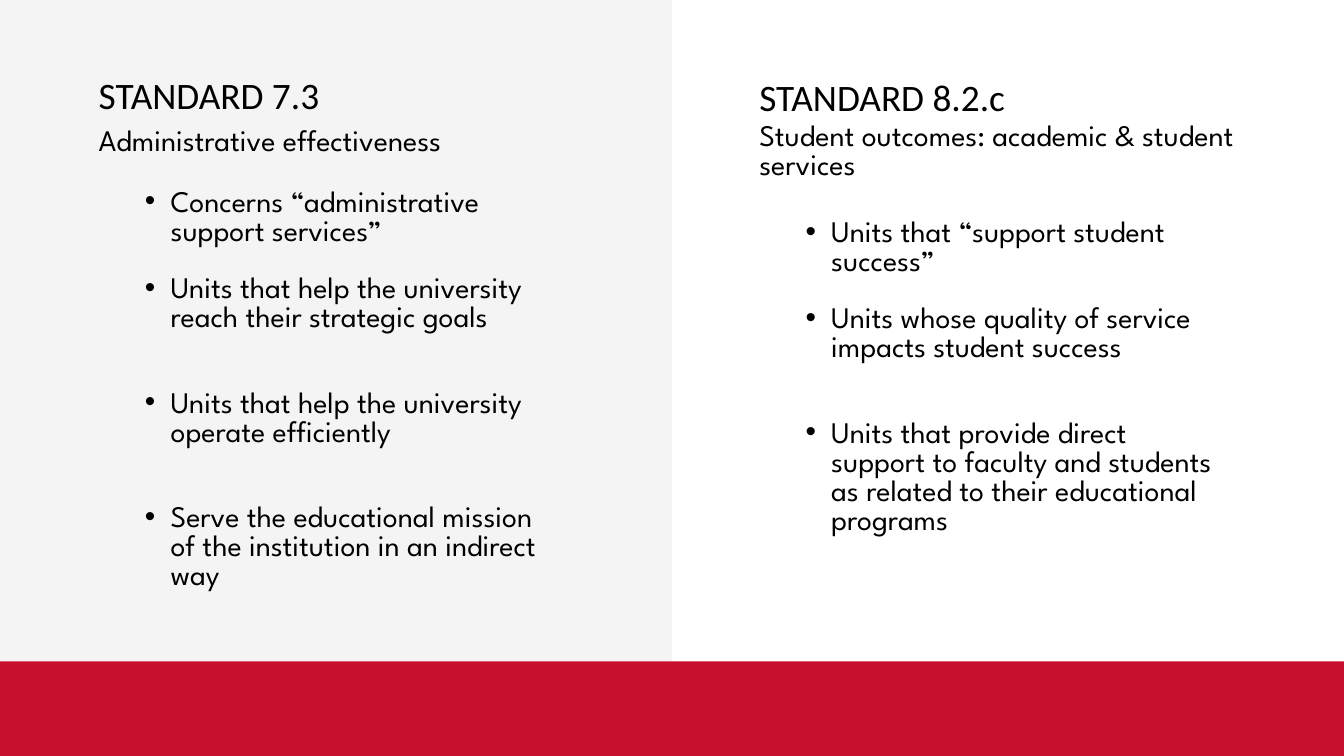
from lxml.etree import SubElement
from pptx import Presentation
from pptx.dml.color import RGBColor
from pptx.enum.shapes import MSO_SHAPE
from pptx.enum.text import MSO_AUTO_SIZE
from pptx.oxml.ns import qn
from pptx.util import Cm, Pt

BLACK = RGBColor(0x00, 0x00, 0x00)
PALE_GREY = RGBColor(0xF4, 0xF4, 0xF4)
RED = RGBColor(0xC8, 0x10, 0x2E)
HEADING_FONT, BODY_FONT = "Calibri", "League Spartan"

# All lengths are in cm. Headings and subtitles: text, top, width, height, line spacing in pt.
# Points: text, height.
STANDARDS = [
    {
        "left": 3.73,
        "heading": ("STANDARD 7.3", 3.02, 16.38, 1.52, 40),
        "subtitle": ("Administrative effectiveness", 4.39, 16.38, 1.5, 44.8),
        "points_top": 7.16,
        "points": [
            ("Concerns “administrative support services”", 2.34),
            ("Units that help the university reach their strategic goals", 3.41),
            ("Units that help the university operate efficiently", 3.41),
            ("Serve the educational mission of the institution in an indirect way", 3.41),
        ],
    },
    {
        "left": 28.7,
        "heading": ("STANDARD 8.2.c", 3.07, 16.38, 1.47, 40),
        "subtitle": ("Student outcomes: academic & student services", 4.67, 19.23, 2.29, 31),
        "points_top": 8.31,
        "points": [
            ("Units that “support student success”", 2.34),
            ("Units whose quality of service impacts student success", 3.41),
            ("Units that provide direct support to faculty and students "
             "as related to their educational programs", 4.5),
        ],
    },
]

SLIDE_WIDTH, SLIDE_HEIGHT = 50.8, 28.58
PANEL_HEIGHT, BAND_HEIGHT = 25, 3.81
POINT_SHIFT, POINT_WIDTH, POINT_GAP, POINT_SPACING = 0.79, 16.38, 0.92, 31
BULLET_MARGIN, BULLET_INDENT = 1.93, -0.97


def add_block(slide, left, top, width, height, color):
    block = slide.shapes.add_shape(
        MSO_SHAPE.RECTANGLE, Cm(left), Cm(top), Cm(width), Cm(height))
    block.shadow.inherit = False
    block.fill.solid()
    block.fill.fore_color.rgb = color
    block.line.fill.background()


def add_text(slide, text, left, top, width, height, spacing, font=BODY_FONT, size=32):
    """Add a one-paragraph box without insets and return its paragraph."""
    box = slide.shapes.add_textbox(Cm(left), Cm(top), Cm(width), Cm(height))
    frame = box.text_frame
    frame.word_wrap = True
    frame.auto_size = MSO_AUTO_SIZE.SHAPE_TO_FIT_TEXT
    frame.margin_left = frame.margin_top = frame.margin_right = frame.margin_bottom = 0
    paragraph = frame.paragraphs[0]
    paragraph.line_spacing = Pt(spacing)
    run = paragraph.add_run()
    run.text = text
    run.font.name = font
    run.font.size = Pt(size)
    run.font.color.rgb = BLACK
    return paragraph


def add_bullet(paragraph):
    paragraph.level = 1
    properties = paragraph._p.get_or_add_pPr()
    properties.set("marL", str(Cm(BULLET_MARGIN)))
    properties.set("indent", str(Cm(BULLET_INDENT)))
    SubElement(properties, qn("a:buFont")).set("typeface", "Arial")
    SubElement(properties, qn("a:buChar")).set("char", "•")


def add_standard(slide, standard):
    left = standard["left"]
    heading, *heading_place = standard["heading"]
    add_text(slide, heading, left, *heading_place, font=HEADING_FONT, size=40)
    subtitle, *subtitle_place = standard["subtitle"]
    add_text(slide, subtitle, left, *subtitle_place)

    top = standard["points_top"]
    for point, height in standard["points"]:
        add_bullet(add_text(slide, point, left + POINT_SHIFT, top,
                            POINT_WIDTH, height, POINT_SPACING))
        top += height + POINT_GAP


def main():
    presentation = Presentation()
    presentation.slide_width = Cm(SLIDE_WIDTH)
    presentation.slide_height = Cm(SLIDE_HEIGHT)
    slide = presentation.slides.add_slide(presentation.slide_layouts[6])
    add_block(slide, 0, 0, SLIDE_WIDTH / 2, PANEL_HEIGHT, PALE_GREY)
    add_block(slide, 0, PANEL_HEIGHT, SLIDE_WIDTH, BAND_HEIGHT, RED)
    for standard in STANDARDS:
        add_standard(slide, standard)
    presentation.save("out.pptx")


if __name__ == "__main__":
    main()
